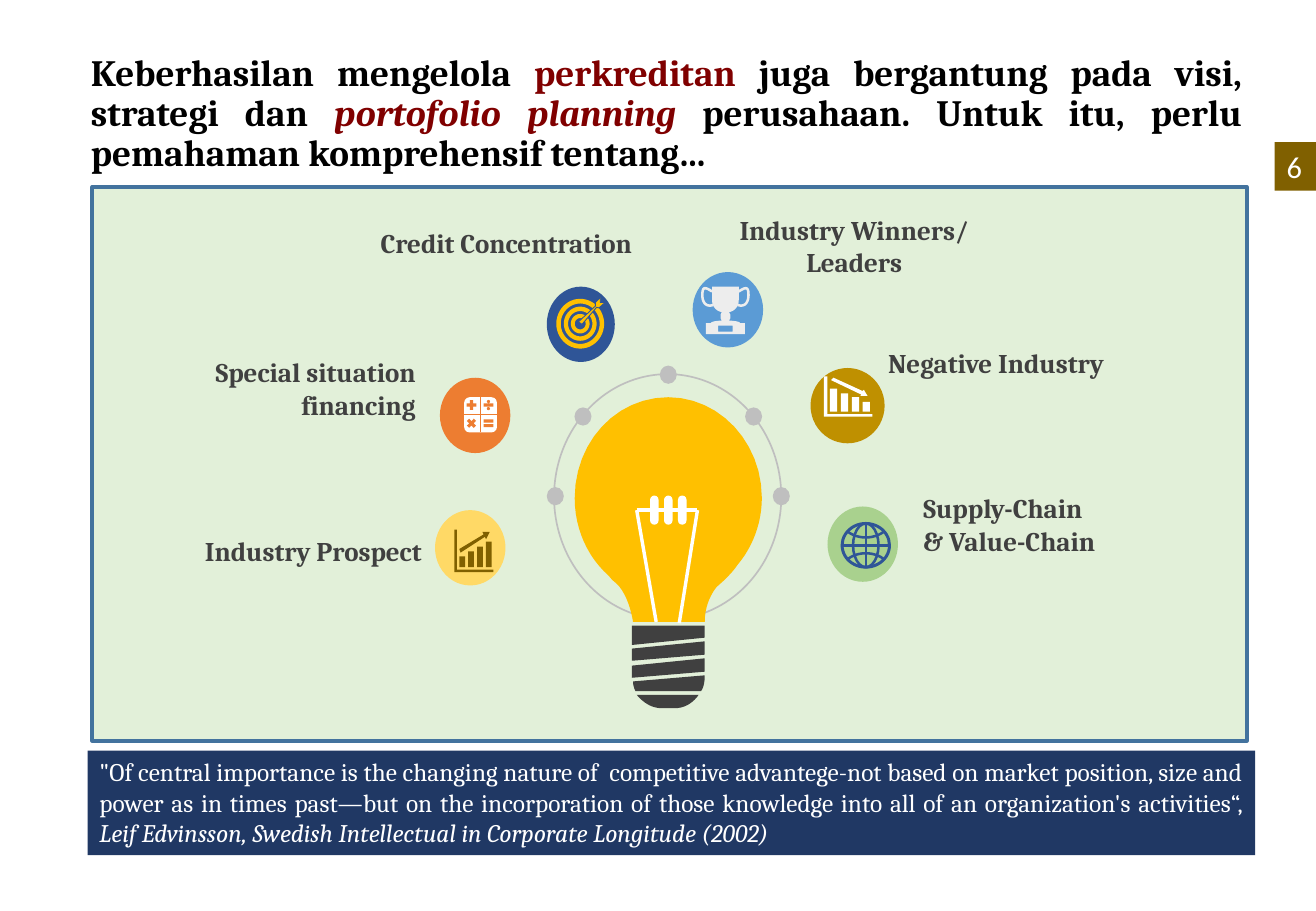
from dataclasses import dataclass
from math import cos, pi, radians, sin

from lxml import etree
from pptx import Presentation
from pptx.dml.color import RGBColor
from pptx.enum.shapes import MSO_CONNECTOR, MSO_SHAPE
from pptx.enum.text import MSO_ANCHOR, PP_ALIGN
from pptx.oxml.ns import qn
from pptx.util import Inches, Pt

RECT, OVAL, ROUND = MSO_SHAPE.RECTANGLE, MSO_SHAPE.OVAL, MSO_SHAPE.ROUNDED_RECTANGLE
SIGNS = (MSO_SHAPE.MATH_PLUS, MSO_SHAPE.MATH_DIVIDE, MSO_SHAPE.MATH_MULTIPLY, MSO_SHAPE.MATH_EQUAL)
STRAIGHT = MSO_CONNECTOR.STRAIGHT
LEFT, CENTER, RIGHT, JUSTIFY = PP_ALIGN.LEFT, PP_ALIGN.CENTER, PP_ALIGN.RIGHT, PP_ALIGN.JUSTIFY
TOP, MIDDLE = MSO_ANCHOR.TOP, MSO_ANCHOR.MIDDLE
CELL = Inches(0.1)
WHITE, GREY, DARK, YELLOW = "FFFFFF", "BFBFBF", "404040", "FFC000"
BLUE, ORANGE, MAROON, BROWN = "2F5597", "ED7D31", "800000", "806000"
Path = list[tuple[float, ...]]


@dataclass
class Box:
    col: float
    row: float
    cols: float
    rows: float


@dataclass
class Run:
    text: str
    color: str
    italic: bool = False


@dataclass
class Label:
    box: Box
    lines: list[str]
    align: int


@dataclass
class Disc:
    box: Box
    color: str


def cells(n: float) -> int:
    return round(n * CELL)


def rgb(color: str) -> RGBColor:
    return RGBColor.from_string(color)


def paint(s, fill: str | None, line: str | None = None, width: float = 1):
    s.shadow.inherit = False
    if fill:
        s.fill.solid()
        s.fill.fore_color.rgb = rgb(fill)
    else:
        s.fill.background()
    if line:
        s.line.color.rgb = rgb(line)
        s.line.width = Pt(width)
    else:
        s.line.fill.background()
    return s


def add_shape(kind, b: Box, fill: str | None, line: str | None = None, width: float = 1):
    s = shapes.add_shape(kind, cells(b.col), cells(b.row), cells(b.cols), cells(b.rows))
    return paint(s, fill, line, width)


def add_line(x1: float, y1: float, x2: float, y2: float, color: str, width: float) -> None:
    s = shapes.add_connector(STRAIGHT, cells(x1), cells(y1), cells(x2), cells(y2))
    s.line.color.rgb = rgb(color)
    s.line.width = Pt(width)
    etree.SubElement(s._element.spPr, qn("a:effectLst"))


def flatten(path: Path, steps: int = 12) -> Path:
    points = []
    for step in path:
        if len(step) == 2:
            points.append(step)
            continue
        knots = [points[-1], step[:2], step[2:4], step[4:]]
        for t in (i / steps for i in range(1, steps + 1)):
            weights = ((1 - t) ** 3, 3 * t * (1 - t) ** 2, 3 * t * t * (1 - t), t ** 3)
            points.append(tuple(sum(w * k[axis] for w, k in zip(weights, knots)) for axis in (0, 1)))
    return points


def add_outline(paths: list[Path], fill: str | None, line: str | None = None,
                width: float = 1, close: bool = True) -> None:
    builder = None
    for path in paths:
        points = [(cells(x), cells(y)) for x, y in flatten(path)]
        if builder is None:
            builder = shapes.build_freeform(*points[0], scale=1.0)
        else:
            builder.move_to(*points[0])
        builder.add_line_segments(points[1:], close=close)
    paint(builder.convert_to_shape(), fill, line, width)


def block(x1: float, y1: float, x2: float, y2: float) -> Path:
    return [(x1, y1), (x2, y1), (x2, y2), (x1, y2)]


def circle(x: float, y: float, r: float) -> Path:
    return [(x + r * cos(i * pi / 24), y + 1.04 * r * sin(i * pi / 24)) for i in range(48)]


def mirror(path: Path, axis: float) -> Path:
    return [(2 * axis - x, y) for x, y in flatten(path)]


def write(s, paragraphs: list[list[Run]], size: float, align: int, bold: bool = False,
          anchor: int = TOP, spacing: float = 1.0, font: str = "Cambria") -> None:
    tf = s.text_frame
    tf.word_wrap = True
    tf.vertical_anchor = anchor
    for i, runs in enumerate(paragraphs):
        p = tf.add_paragraph() if i else tf.paragraphs[0]
        p.alignment, p.line_spacing = align, spacing
        p.font.name, p.font.size, p.font.bold = font, Pt(size), bold
        for run in runs:
            r = p.add_run()
            r.text = run.text
            r.font.color.rgb = rgb(run.color)
            r.font.italic = run.italic


def add_text(b: Box, paragraphs: list[list[Run]], size: float, align: int, **style) -> None:
    s = shapes.add_textbox(cells(b.col), cells(b.row), cells(b.cols), cells(b.rows))
    write(s, paragraphs, size, align, **style)


def draw_bulb() -> None:
    add_shape(OVAL, Box(45.6, 30.8, 18.7, 20.2), None, GREY)
    add_outline([[(55, 32.7), (59.2, 32.7, 62.7, 36.4, 62.7, 41), (62.7, 43.1, 61.9, 45.1, 60.7, 46.5),
                  (60.3, 47.1, 59.7, 47.7, 59, 48.3), (59, 48.3, 58, 49.4, 58, 51.2), (52.1, 51.2),
                  (52.1, 51.2, 51.8, 49, 50.7, 48), (50.7, 48, 50.4, 47.8, 50.1, 47.4),
                  (48.4, 45.9, 47.3, 43.6, 47.3, 41), (47.3, 36.4, 50.7, 32.7, 55, 32.7)]], YELLOW)
    threads = [[(52, top), (58, top - 0.6), (58, top + 0.5), (52, top + 1)] for top in (53.4, 54.8)]
    add_outline([block(52, 51.5, 58, 52.5)[:3] + [(52, 53.1), (52, 51.5)], *threads,
                 [(58, 55.6), (58, 56.2, 57.9, 56.6, 57.7, 56.9), (52.3, 56.9),
                  (52.2, 56.7, 52.1, 56.4, 52.1, 56.1)],
                 [(52.4, 57.2), (57.5, 57.2), (57.1, 57.8, 56.4, 58.3, 55.6, 58.3), (54.4, 58.3),
                  (53.6, 58.3, 52.9, 57.8, 52.4, 57.2)]], DARK)
    for ends in ((52.4, 42, 54, 51.2), (57.4, 42, 55.9, 51.3), (52.4, 42, 57.4, 42)):
        add_line(*ends, WHITE, 2)
    for i in range(3):
        add_shape(ROUND, Box(53.5 + 1.15 * i, 40.8, 0.7, 2.4), WHITE).adjustments[0] = 0.5
    for angle in map(radians, (0, 41, 90, 139, 180)):
        add_shape(OVAL, Box(54.3 + 9.3 * cos(angle), 40.1 - 10 * sin(angle), 1.4, 1.5), GREY)


def draw_target() -> None:
    add_outline([circle(47.75, 26.65, r) for r in (1.97, 1.6, 1.35, 1, 0.77, 0.45)], YELLOW)
    add_outline([[(47.6, 26.5), (49, 25.2), (49, 24.9), (49.4, 24.5), (49.4, 24.9), (49.8, 24.9),
                  (49.3, 25.35), (49.1, 25.3), (47.9, 26.7)]], YELLOW, BLUE, 0.5)


def draw_trophy() -> None:
    axis, color = 59.7, "EDEDED"
    half = [(axis, 23.6), (60.8, 23.6), (60.8, 24.7), (60.8, 25.2, 60.5, 25.6, 60, 25.7), (60.1, 25.9),
            (60.1, 26.2), (60, 26.4), (60.5, 26.4, 60.9, 26.5, 60.9, 26.6), (61.3, 26.6), (61.3, 27.5),
            (axis, 27.5)]
    add_outline([flatten(half) + mirror(half, axis)[::-1], block(59.1, 26.8, 60.3, 27.3)], color)
    handle = [(60.8, 24), (61.4, 23.6, 61.6, 23.6, 61.6, 24.3), (61.6, 25, 61.2, 25.3, 60.7, 25.1)]
    add_outline([handle, mirror(handle, axis)], None, color, 1.5, close=False)


def draw_calculator() -> None:
    add_shape(ROUND, Box(38.2, 32.7, 2.7, 2.9), WHITE)
    add_line(39.5, 32.7, 39.5, 35.6, ORANGE, 0.25)
    add_line(38.2, 34.1, 40.9, 34.1, ORANGE, 0.25)
    for i, sign in enumerate(SIGNS):
        add_shape(sign, Box(38.25 + 1.4 * (i % 2), 32.8 + 1.5 * (i // 2), 1.1, 1.1), ORANGE)


def draw_chart(axes: Path, arrow: Path, left: float, step: float, width: float,
               tops: list[float], base: float, color: str) -> None:
    bars = [block(left + step * i, top, left + step * i + width, base) for i, top in enumerate(tops)]
    add_outline([axes, arrow, *bars], color)


def draw_globe() -> None:
    add_shape(OVAL, Box(70.2, 43.1, 2.1, 3.6), None, BLUE, 1.5)
    add_shape(OVAL, Box(69.3, 43.1, 3.9, 3.6), None, BLUE, 1.75)
    add_line(69.3, 44.9, 73.2, 44.9, BLUE, 1.5)
    add_line(71.25, 43.1, 71.25, 46.7, BLUE, 1.5)
    add_outline([[(69.8, y), (70.6, bend, 71.9, bend, 72.7, y)] for y, bend in ((43.8, 44.4), (46, 45.4))],
                None, BLUE, 1.5, close=False)


LABELS = [
    Label(Box(72.1, 28, 25.3, 3.7), ["Negative Industry"], LEFT),
    Label(Box(75, 40, 22.9, 6.4), ["Supply-Chain", "& Value-Chain"], LEFT),
    Label(Box(55.3, 17.1, 30, 6.4), ["Industry Winners/", "Leaders"], CENTER),
    Label(Box(24.2, 18.2, 28.8, 3.7), ["Credit Concentration"], RIGHT),
    Label(Box(10.7, 43.5, 25, 3.7), ["Industry Prospect"], RIGHT),
    Label(Box(13.6, 28.8, 21.6, 6.4), ["Special situation financing"], RIGHT),
]
DISCS = [
    Disc(Box(57, 22.4, 5.8, 6.2), "5B9BD5"),
    Disc(Box(45, 23.6, 5.6, 6.2), BLUE),
    Disc(Box(66.7, 30.3, 6.1, 6.2), "BF9000"),
    Disc(Box(36.2, 31.1, 5.8, 6.2), ORANGE),
    Disc(Box(68.1, 41.7, 5.8, 6.2), "A9D18E"),
    Disc(Box(35.8, 42, 5.8, 6.2), "FFD966"),
]
TITLE = [Run("Keberhasilan mengelola ", "000000"), Run("perkreditan ", MAROON),
         Run("juga bergantung pada visi, strategi dan ", "000000"),
         Run("portofolio planning ", MAROON, True),
         Run("perusahaan. Untuk itu, perlu pemahaman komprehensif tentang...", "000000")]
QUOTE = [Run('"Of central importance is the changing nature of  competitive advantege-not based on market '
             "position, size and power as in times past—but on the incorporation of those knowledge into "
             "all of an organization's activities“, ", WHITE),
         Run("Leif Edvinsson, Swedish Intellectual in Corporate Longitude (2002)", WHITE, True)]

prs = Presentation()
prs.slide_width, prs.slide_height = Inches(10.83), Inches(7.5)
shapes = prs.slides.add_slide(prs.slide_layouts[6]).shapes

add_shape(RECT, Box(7.6, 15.4, 95, 45.6), "E2F0D9", "43739E", 2.25)
add_text(Box(6.5, 3.1, 96.7, 12.6), [TITLE], 22, JUSTIFY, bold=True, anchor=MIDDLE, spacing=0.9)
draw_bulb()
for label in LABELS:
    add_text(label.box, [[Run(line, DARK)] for line in label.lines], 16, label.align, bold=True)
for disc in DISCS:
    add_shape(OVAL, disc.box, disc.color)
draw_target()
draw_trophy()
draw_calculator()
draw_globe()
draw_chart([(67.8, 31), (68.1, 31), (68.1, 34.1), (71.8, 34.1), (71.8, 34.3), (67.8, 34.3)],
           [(68.6, 31.1), (71, 32.2), (71.1, 32.1), (71.4, 32.6), (70.8, 32.6), (70.9, 32.5), (68.4, 31.3)],
           68.3, 0.9, 0.6, [32, 32.4, 32.7, 33.1], 33.9, WHITE)
draw_chart([(37.4, 43.6), (37.6, 43.6), (37.6, 46.9), (40.6, 46.9), (40.6, 47.1), (37.4, 47.1)],
           [(39.7, 43.8), (40.3, 43.8), (40, 44.4), (39.9, 44.2), (37.9, 45.5), (37.8, 45.2), (39.8, 44)],
           37.8, 0.73, 0.47, [45.8, 45.4, 45, 44.6], 46.7, BROWN)
write(add_shape(RECT, Box(7.2, 61.8, 96.1, 8.6), "203864"), [QUOTE], 15, JUSTIFY)
write(add_shape(RECT, Box(104.9, 11.7, 3.4, 4), BROWN), [[Run("6", WHITE)]], 18, LEFT, font="Calibri")
prs.save("out.pptx")
